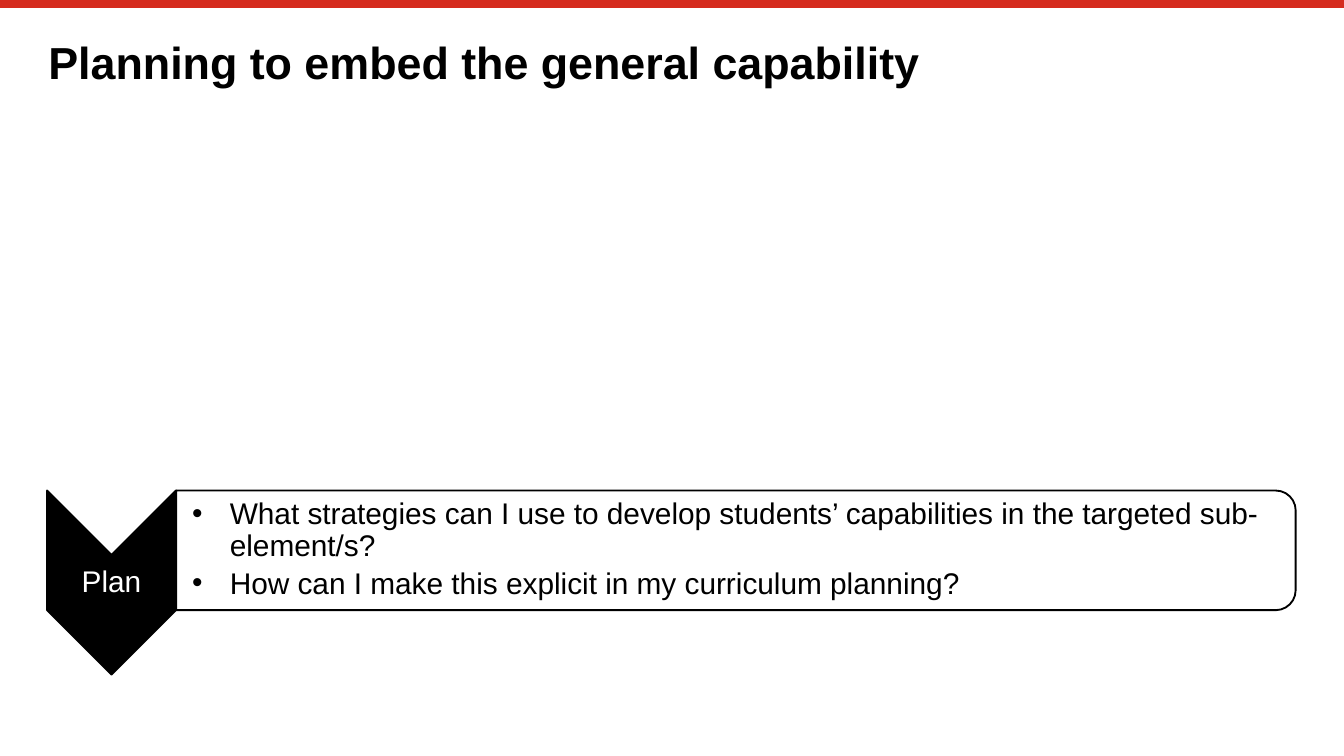
from lxml import etree
from pptx import Presentation
from pptx.dml.color import RGBColor
from pptx.enum.shapes import MSO_CONNECTOR, MSO_SHAPE
from pptx.enum.text import MSO_ANCHOR, MSO_AUTO_SIZE, PP_ALIGN
from pptx.oxml.ns import qn
from pptx.util import Inches, Pt

BLACK = RGBColor(0x00, 0x00, 0x00)
WHITE = RGBColor(0xFF, 0xFF, 0xFF)
RED = RGBColor(0xD5, 0x2B, 0x1E)

STRAIGHT = MSO_CONNECTOR.STRAIGHT
CHEVRON, PANEL = MSO_SHAPE.CHEVRON, MSO_SHAPE.ROUND_2_SAME_RECTANGLE
TOP, MIDDLE = MSO_ANCHOR.TOP, MSO_ANCHOR.MIDDLE
LEFT, CENTER = PP_ALIGN.LEFT, PP_ALIGN.CENTER
NO_AUTOFIT = MSO_AUTO_SIZE.NONE

SLIDE_WIDTH = 10
SLIDE_HEIGHT = SLIDE_WIDTH * 9 / 16
HANGING_INDENT = 0.28
TITLE_FONT = {"name": "Arial", "size": Pt(24), "bold": True}
BODY_FONT = {"name": "Arial", "size": Pt(16), "bold": False}

TITLE = "Planning to embed the general capability"
STAGE = "Plan"
QUESTIONS = [
    "What strategies can I use to develop students’ capabilities in the targeted sub-element/s?",
    "How can I make this explicit in my curriculum planning?",
]


def set_attributes(target, values):
    for name, value in values.items():
        setattr(target, name, value)


def place(shape, left, top, width, height):
    lengths = zip(("left", "top", "width", "height"), (left, top, width, height))
    set_attributes(shape, {name: Inches(length) for name, length in lengths})


def set_frame(frame, margins, anchor):
    sides = ("margin_left", "margin_top", "margin_right", "margin_bottom")
    set_attributes(frame, {side: Inches(margin) for side, margin in zip(sides, margins)})
    set_attributes(frame, {"word_wrap": True, "auto_size": NO_AUTOFIT,
                           "vertical_anchor": anchor})


def write_paragraph(paragraph, text, font, color, alignment=LEFT, space_after=0):
    paragraph.text = text
    set_attributes(paragraph, {"alignment": alignment, "line_spacing": 0.9,
                               "space_before": Pt(0), "space_after": Pt(space_after)})
    set_attributes(paragraph.font, font)
    paragraph.font.color.rgb = color


def add_bullet(paragraph):
    properties = paragraph._p.get_or_add_pPr()
    properties.set("marL", str(Inches(HANGING_INDENT)))
    properties.set("indent", str(-Inches(HANGING_INDENT)))
    etree.SubElement(properties, qn("a:buChar")).set("char", "•")


def add_top_rule(slide):
    height = Inches(0.03)
    rule = slide.shapes.add_connector(STRAIGHT, 0, height, Inches(SLIDE_WIDTH), height)
    rule.line.color.rgb = RED
    rule.line.width = Pt(4.2)
    etree.SubElement(rule._element.spPr, qn("a:effectLst"))


def add_turned_shape(slide, kind, left, top, width, height, fill=None):
    """Add a shape turned clockwise by 90 degrees that covers the given area."""
    shape = slide.shapes.add_shape(kind, 0, 0, 0, 0)
    place(shape, left + (width - height) / 2, top + (height - width) / 2, height, width)
    shape.rotation = 90
    shape.shadow.inherit = False
    if fill is None:
        shape.fill.background()
    else:
        shape.fill.solid()
        shape.fill.fore_color.rgb = fill
    shape.line.color.rgb = BLACK
    shape.line.width = Pt(1)


def fill_title(slide):
    title = slide.shapes.title
    place(title, 0.36, 0.3, 9.29, 0.39)
    set_frame(title.text_frame, (0, 0, 0, 0), TOP)
    write_paragraph(title.text_frame.paragraphs[0], TITLE, TITLE_FONT, BLACK)


def add_stage_label(slide):
    label = slide.shapes.add_textbox(0, 0, 0, 0)
    place(label, 0.35, 4.13, 0.96, 0.41)
    set_frame(label.text_frame, (0.01,) * 4, MIDDLE)
    write_paragraph(label.text_frame.paragraphs[0], STAGE, BODY_FONT, WHITE, CENTER, 5.6)


def fill_questions(slide):
    body = slide.placeholders[1]
    place(body, 1.31, 3.69, 8.29, 0.8)
    frame = body.text_frame
    set_frame(frame, (0.12, 0.01, 0.01, 0.01), MIDDLE)
    for index, question in enumerate(QUESTIONS):
        paragraph = frame.add_paragraph() if index else frame.paragraphs[0]
        paragraph.level = 1
        add_bullet(paragraph)
        write_paragraph(paragraph, question, BODY_FONT, BLACK, space_after=2.7)


def main():
    presentation = Presentation()
    presentation.slide_width = Inches(SLIDE_WIDTH)
    presentation.slide_height = Inches(SLIDE_HEIGHT)
    slide = presentation.slides.add_slide(presentation.slide_layouts[1])
    add_top_rule(slide)
    fill_title(slide)
    add_turned_shape(slide, CHEVRON, 0.35, 3.65, 0.96, 1.37, BLACK)
    add_stage_label(slide)
    add_turned_shape(slide, PANEL, 1.31, 3.65, 8.33, 0.89)
    fill_questions(slide)
    presentation.save("out.pptx")


if __name__ == "__main__":
    main()
